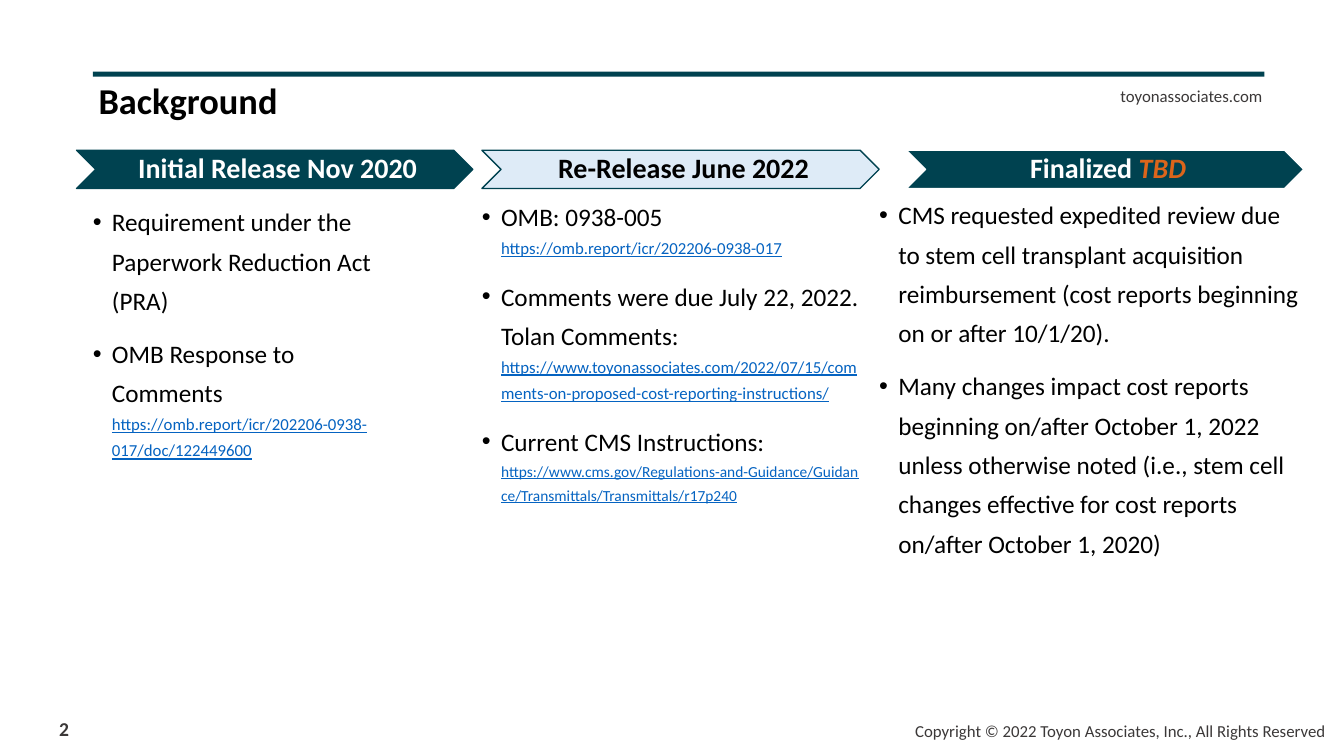
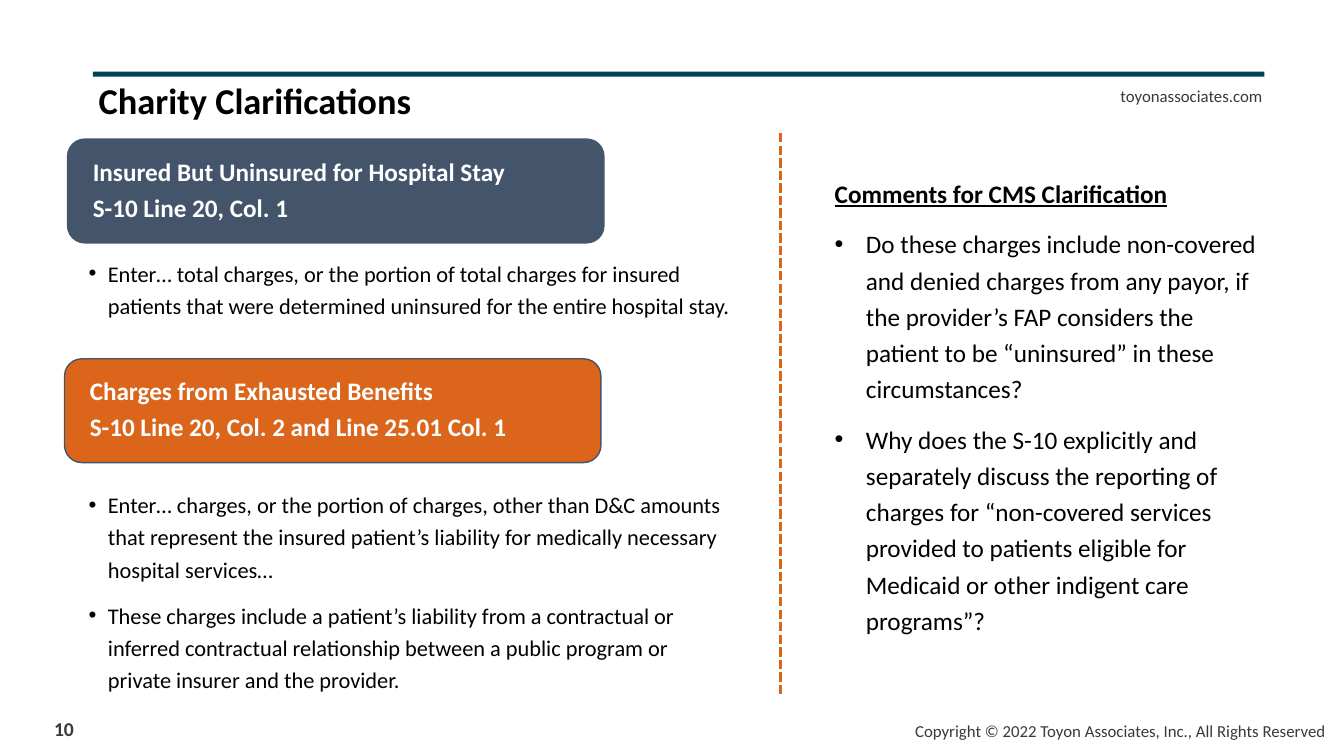
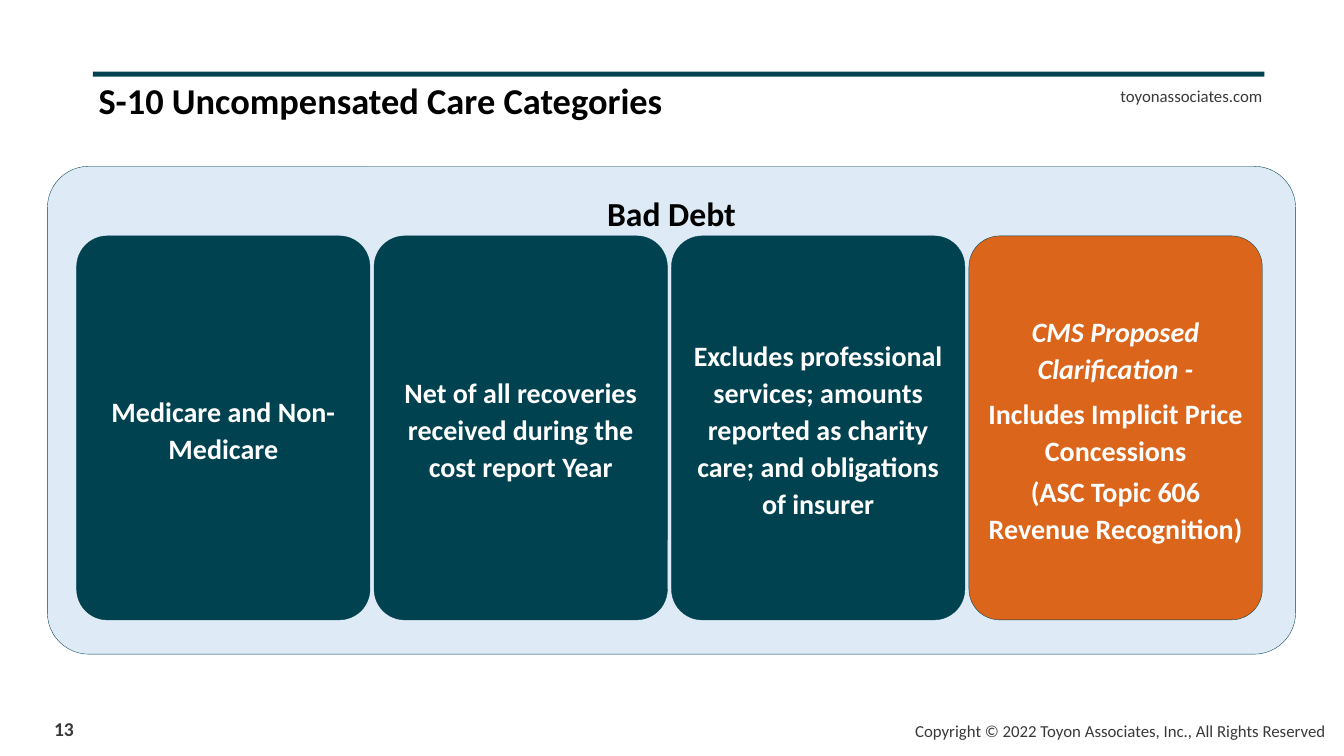
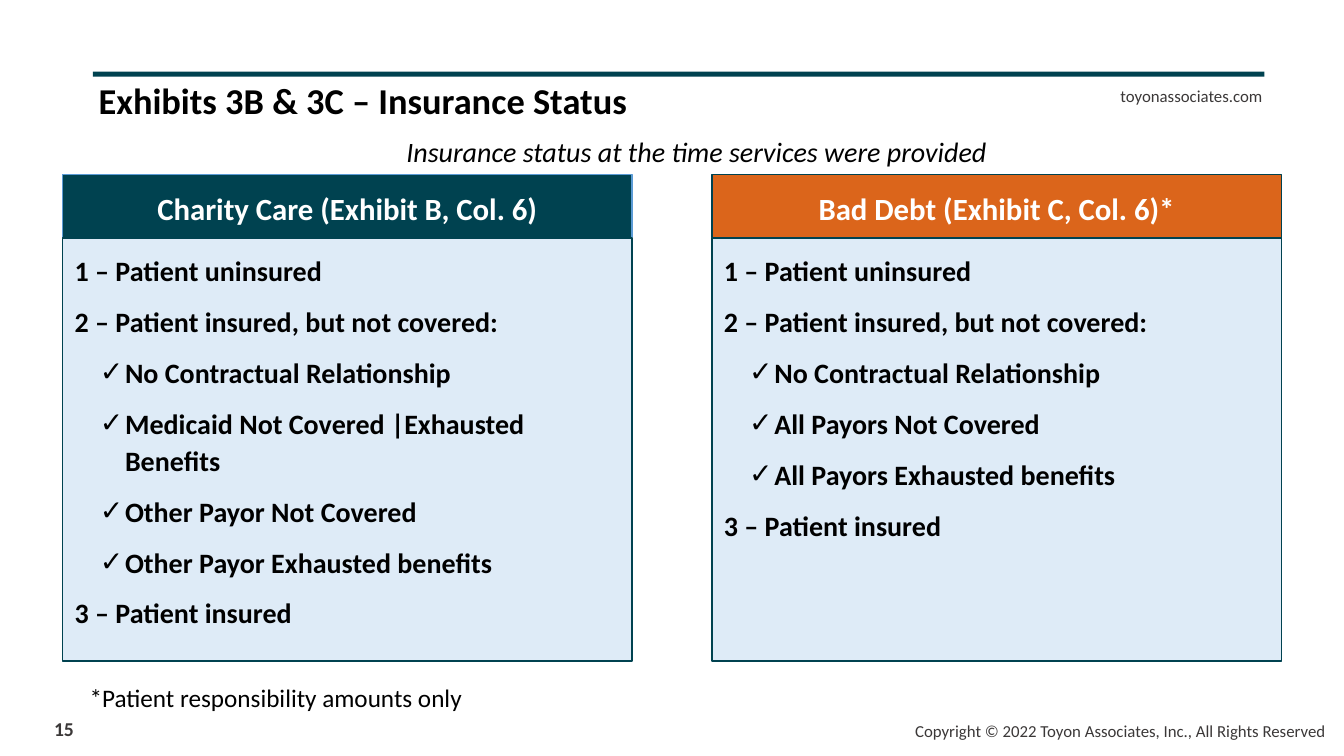
import dataclasses
import typing

import lxml.etree
import pptx
import pptx.dml.color
import pptx.enum.dml
import pptx.enum.shapes
import pptx.enum.text
import pptx.oxml.ns
import pptx.util

PX = 9144
FONT = "Calibri"

TEAL = pptx.dml.color.RGBColor(0x00, 0x42, 0x50)
ORANGE = pptx.dml.color.RGBColor(0xDB, 0x65, 0x1B)
SLATE = pptx.dml.color.RGBColor(0x44, 0x54, 0x6A)
PALE = pptx.dml.color.RGBColor(0xDE, 0xEB, 0xF7)
SKY = pptx.dml.color.RGBColor(0x5B, 0x9B, 0xD5)
LINK = pptx.dml.color.RGBColor(0x05, 0x63, 0xC1)
GRAY = pptx.dml.color.RGBColor(0x3B, 0x38, 0x38)
BLACK = pptx.dml.color.RGBColor(0x00, 0x00, 0x00)
WHITE = pptx.dml.color.RGBColor(0xFF, 0xFF, 0xFF)

LEFT = pptx.enum.text.PP_ALIGN.LEFT
CENTER = pptx.enum.text.PP_ALIGN.CENTER
RIGHT = pptx.enum.text.PP_ALIGN.RIGHT
TOP = pptx.enum.text.MSO_ANCHOR.TOP
MIDDLE = pptx.enum.text.MSO_ANCHOR.MIDDLE
RECT = pptx.enum.shapes.MSO_SHAPE.RECTANGLE
ROUND = pptx.enum.shapes.MSO_SHAPE.ROUNDED_RECTANGLE
CHEVRON = pptx.enum.shapes.MSO_SHAPE.CHEVRON

Color = pptx.dml.color.RGBColor
Insets = tuple[int, int, int, int]
DEFAULT_INSETS: Insets = (10, 5, 10, 5)
NO_INSETS: Insets = (0, 0, 0, 0)


class Area(typing.NamedTuple):
    left: int
    top: int
    width: int
    height: int


@dataclasses.dataclass(frozen=True)
class Tail:
    text: str
    size: float
    color: Color
    bold: bool = False
    italic: bool = False
    underline: bool = False
    new_line: bool = False


@dataclasses.dataclass(frozen=True)
class Item:
    text: str
    tail: Tail | None = None
    after: float = 10
    italic: bool = False
    bullet: str = ""
    indent: int = 0


@dataclasses.dataclass(frozen=True)
class Stage:
    arrow: Area
    label: str
    fill: Color
    line: Color
    color: Color
    body: Area
    items: tuple[Item, ...]
    tail: Tail | None = None


@dataclasses.dataclass(frozen=True)
class Topic:
    banner: Area
    fill: Color
    lines: tuple[str, str]
    body: Area
    items: tuple[Item, ...]


@dataclasses.dataclass(frozen=True)
class Card:
    fill: Color
    items: tuple[Item, ...]


@dataclasses.dataclass(frozen=True)
class Panel:
    left: int
    heading: str
    fill: Color
    line: Color
    checks: tuple[str, ...]


def link(address: str, size: float = 12) -> Tail:
    return Tail(address, size, LINK, underline=True, new_line=True)


STAGES = (
    Stage(
        Area(76, 149, 393, 38), "Initial Release Nov 2020", TEAL, TEAL, WHITE,
        Area(92, 196, 312, 537),
        (
            Item("Requirement under the Paperwork Reduction Act (PRA)"),
            Item("OMB Response to Comments",
                 link("https://omb.report/icr/202206-0938-017/doc/122449600")),
        ),
    ),
    Stage(
        Area(478, 149, 394, 38), "Re-Release June 2022", PALE, TEAL, BLACK,
        Area(478, 191, 380, 537),
        (
            Item("OMB: 0938-005", link("https://omb.report/icr/202206-0938-017")),
            Item("Comments were due July 22, 2022. Tolan Comments:",
                 link("https://www.toyonassociates.com/2022/07/15/"
                      "comments-on-proposed-cost-reporting-instructions/")),
            Item("Current CMS Instructions:",
                 link("https://www.cms.gov/Regulations-and-Guidance/Guidance/"
                      "Transmittals/Transmittals/r17p240", 11)),
        ),
    ),
    Stage(
        Area(899, 149, 394, 38), "Finalized ", TEAL, WHITE, WHITE,
        Area(872, 189, 417, 537),
        (
            Item("CMS requested expedited review due to stem cell transplant acquisition "
                 "reimbursement (cost reports beginning on or after 10/1/20)."),
            Item("Many changes impact cost reports beginning on/after October 1, 2022 "
                 "unless otherwise noted (i.e., stem cell changes effective for cost "
                 "reports on/after October 1, 2020)"),
        ),
        Tail("TBD", 20, ORANGE, bold=True, italic=True),
    ),
)

TOPICS = (
    Topic(
        Area(67, 138, 532, 103), SLATE,
        ("Insured But Uninsured for Hospital Stay", "S-10 Line 20, Col. 1"),
        Area(29, 190, 760, 149),
        (
            Item("Enter… total charges, or the portion of total charges for insured "
                 "patients that were determined uninsured for the entire hospital stay."),
        ),
    ),
    Topic(
        Area(64, 356, 532, 103), ORANGE,
        ("Charges from Exhausted Benefits", "S-10 Line 20, Col. 2 and Line 25.01 Col. 1"),
        Area(29, 409, 760, 298),
        (
            Item("Enter… charges, or the portion of charges, other than D&C amounts that "
                 "represent the insured patient’s liability for medically necessary "
                 "hospital services…"),
            Item("These charges include a patient’s liability from a contractual or "
                 "inferred contractual relationship between a public program or private "
                 "insurer and the provider."),
        ),
    ),
)

QUESTIONS = (
    "Do these charges include non-covered and denied charges from any payor, if the "
    "provider’s FAP considers the patient to be “uninsured” in these circumstances?",
    "Why does the S-10 explicitly and separately discuss the reporting of charges for "
    "“non-covered services provided to patients eligible for Medicaid or other indigent "
    "care programs”?",
)

CARDS = (
    Card(TEAL, (Item("Medicare and Non-Medicare", after=0),)),
    Card(TEAL, (Item("Net of all recoveries received during the cost report Year", after=0),)),
    Card(TEAL, (Item("Excludes professional services; amounts reported as charity care; "
                     "and obligations of insurer", after=0),)),
    Card(ORANGE, (
        Item("CMS Proposed Clarification -", after=6, italic=True),
        Item("Includes Implicit Price Concessions", after=3),
        Item("(ASC Topic 606 Revenue Recognition)", after=0),
    )),
)

PANELS = (
    Panel(62, "Charity Care (Exhibit B, Col. 6)", TEAL, SKY, (
        "No Contractual Relationship",
        "Medicaid Not Covered |Exhausted Benefits",
        "Other Payor Not Covered",
        "Other Payor Exhausted benefits",
    )),
    Panel(706, "Bad Debt (Exhibit C, Col. 6)*", ORANGE, TEAL, (
        "No Contractual Relationship",
        "All Payors Not Covered",
        "All Payors Exhausted benefits",
    )),
)


def emu(area: Area) -> list[int]:
    return [length * PX for length in area]


def prepare(frame, insets: Insets, anchor, wrap: bool = True) -> None:
    frame.word_wrap = wrap
    frame.vertical_anchor = anchor
    frame.margin_left, frame.margin_top, frame.margin_right, frame.margin_bottom = (
        inset * PX for inset in insets
    )


def add_box(page, area: Area, insets: Insets = DEFAULT_INSETS, anchor=TOP, wrap: bool = True):
    frame = page.shapes.add_textbox(*emu(area)).text_frame
    prepare(frame, insets, anchor, wrap)
    return frame


def add_block(page, kind, area: Area, fill: Color, line: Color | None = None,
              weight: float = 1, corner: float | None = None,
              insets: Insets = DEFAULT_INSETS, anchor=MIDDLE):
    shape = page.shapes.add_shape(kind, *emu(area))
    shape.shadow.inherit = False
    shape.fill.solid()
    shape.fill.fore_color.rgb = fill
    if line is None:
        shape.line.fill.background()
    else:
        shape.line.color.rgb = line
        shape.line.width = pptx.util.Pt(weight)
    if corner is not None:
        shape.adjustments[0] = corner
    prepare(shape.text_frame, insets, anchor)
    return shape.text_frame


def add_span(para, text: str, size: float, color: Color, bold: bool, italic: bool,
             underline: bool) -> None:
    span = para.add_run()
    span.text = text
    span.font.name = FONT
    span.font.size = pptx.util.Pt(size)
    span.font.color.rgb = color
    span.font.bold = bold
    span.font.italic = italic
    span.font.underline = underline


def write(frame, text: str, *, size: float, color: Color = BLACK, bold: bool = False,
          italic: bool = False, underline: bool = False, align=LEFT, spacing: float = 1.0,
          after: float = 0, indent: int = 0, hang: int = 0, bullet: str = "",
          tail: Tail | None = None) -> None:
    para = frame.paragraphs[0]
    if para.runs:
        para = frame.add_paragraph()
    if indent:
        properties = para._p.get_or_add_pPr()
        properties.set("marL", str(indent * PX))
        properties.set("indent", str(-hang * PX))
        if bullet:
            for tag, name, value in (("a:buFont", "typeface", "Arial"),
                                     ("a:buChar", "char", bullet)):
                lxml.etree.SubElement(properties, pptx.oxml.ns.qn(tag)).set(name, value)
    para.alignment = align
    para.line_spacing = spacing
    para.space_after = pptx.util.Pt(after)
    add_span(para, text, size, color, bold, italic, underline)
    if tail:
        if tail.new_line:
            para.add_line_break()
        add_span(para, tail.text, tail.size, tail.color, tail.bold, tail.italic, tail.underline)


def add_page(deck, title: str, number: int):
    page = deck.slides.add_slide(deck.slide_layouts[6])
    add_block(page, RECT, Area(92, 71, 1162, 5), TEAL)
    write(add_box(page, Area(981, 80, 281, 30), anchor=MIDDLE), "toyonassociates.com",
          size=12, color=GRAY, align=RIGHT)
    write(add_box(page, Area(25, 706, 77, 34), anchor=MIDDLE), str(number),
          size=14, color=GRAY, bold=True, align=CENTER)
    write(add_box(page, Area(893, 710, 432, 30), anchor=MIDDLE, wrap=False),
          "Copyright © 2022 Toyon Associates, Inc., All Rights Reserved",
          size=12, color=GRAY, align=RIGHT)
    write(add_box(page, Area(88, 78, 903, 53)), title, size=26, bold=True, spacing=0.9)
    return page


def draw_background(deck) -> None:
    page = add_page(deck, "Background", 2)
    for stage in STAGES:
        arrow = add_block(page, CHEVRON, stage.arrow, stage.fill, stage.line,
                          insets=(9, 3, 3, 3))
        write(arrow, stage.label, size=20, color=stage.color, bold=True, align=CENTER,
              spacing=0.9, tail=stage.tail)
        body = add_box(page, stage.body, NO_INSETS)
        for item in stage.items:
            write(body, item.text, size=18, spacing=1.3, after=item.after,
                  indent=19, hang=19, bullet="•", tail=item.tail)


def draw_charity(deck) -> None:
    page = add_page(deck, "Charity Clarifications", 10)
    for topic in TOPICS:
        body = add_box(page, topic.body, (59, 73, 59, 12))
        for item in topic.items:
            write(body, item.text, size=16, spacing=1.2, after=item.after,
                  indent=19, hang=19, bullet="•")
        banner = add_block(page, ROUND, topic.banner, topic.fill, SLATE, insets=(20, 0, 20, 0))
        for text in topic.lines:
            write(banner, text, size=18, color=WHITE, bold=True, spacing=0.9, after=6.3)
    comments = add_box(page, Area(818, 166, 439, 472))
    write(comments, "Comments for CMS Clarification", size=18, bold=True, underline=True,
          spacing=1.2, after=10)
    for question in QUESTIONS:
        write(comments, question, size=18, spacing=1.2, after=10,
              indent=31, hang=31, bullet="•")
    divider = page.shapes.add_connector(
        pptx.enum.shapes.MSO_CONNECTOR.STRAIGHT, 774 * PX, 132 * PX, 774 * PX, 690 * PX)
    divider.line.color.rgb = ORANGE
    divider.line.width = pptx.util.Pt(2.25)
    divider.line.dash_style = pptx.enum.dml.MSO_LINE.SQUARE_DOT
    lxml.etree.SubElement(divider._element.spPr, pptx.oxml.ns.qn("a:effectLst"))


def draw_categories(deck) -> None:
    page = add_page(deck, "S-10 Uncompensated Care Categories", 13)
    backdrop = add_block(page, ROUND, Area(47, 165, 1238, 484), PALE, TEAL, 0.25, 0.085,
                         (10, 10, 10, 299), TOP)
    write(backdrop, "Bad Debt", size=24, bold=True, align=CENTER, spacing=1.1)
    width, gap = 291, 4
    for index, card in enumerate(CARDS):
        area = Area(76 + index * (width + gap), 234, width, 381)
        frame = add_block(page, ROUND, area, card.fill, TEAL, 0.25, 0.105, (8, 8, 8, 8))
        for item in card.items:
            write(frame, item.text, size=20, color=WHITE, bold=True, italic=item.italic,
                  align=CENTER, spacing=1.1, after=item.after)


def draw_insurance(deck) -> None:
    page = add_page(deck, "Exhibits 3B & 3C – Insurance Status", 15)
    for panel in PANELS:
        heading = add_block(page, RECT, Area(panel.left, 173, 565, 63), panel.fill, panel.line,
                            insets=(17, 10, 17, 10))
        write(heading, panel.heading, size=22, color=WHITE, bold=True, align=CENTER, spacing=1.1)
        body = add_block(page, RECT, Area(panel.left, 236, 565, 420), PALE, TEAL,
                         insets=(12, 12, 16, 17), anchor=TOP)
        items = (
            Item("1 – Patient uninsured", indent=25),
            Item("2 – Patient insured, but not covered:", indent=25),
            *(Item(check, indent=50, bullet="✓") for check in panel.checks),
            Item("3 – Patient insured", indent=25),
        )
        for item in items:
            write(body, item.text, size=20, bold=True, spacing=1.1, after=item.after,
                  indent=item.indent, hang=25, bullet=item.bullet)
    write(add_box(page, Area(79, 672, 574, 40)), "*Patient responsibility amounts only", size=18)
    write(add_box(page, Area(350, 129, 682, 44)),
          "Insurance status at the time services were provided",
          size=20, italic=True, align=CENTER)


def main() -> None:
    deck = pptx.Presentation()
    deck.slide_width = 1333 * PX
    deck.slide_height = 750 * PX
    for draw in (draw_background, draw_charity, draw_categories, draw_insurance):
        draw(deck)
    deck.save("out.pptx")


if __name__ == "__main__":
    main()
